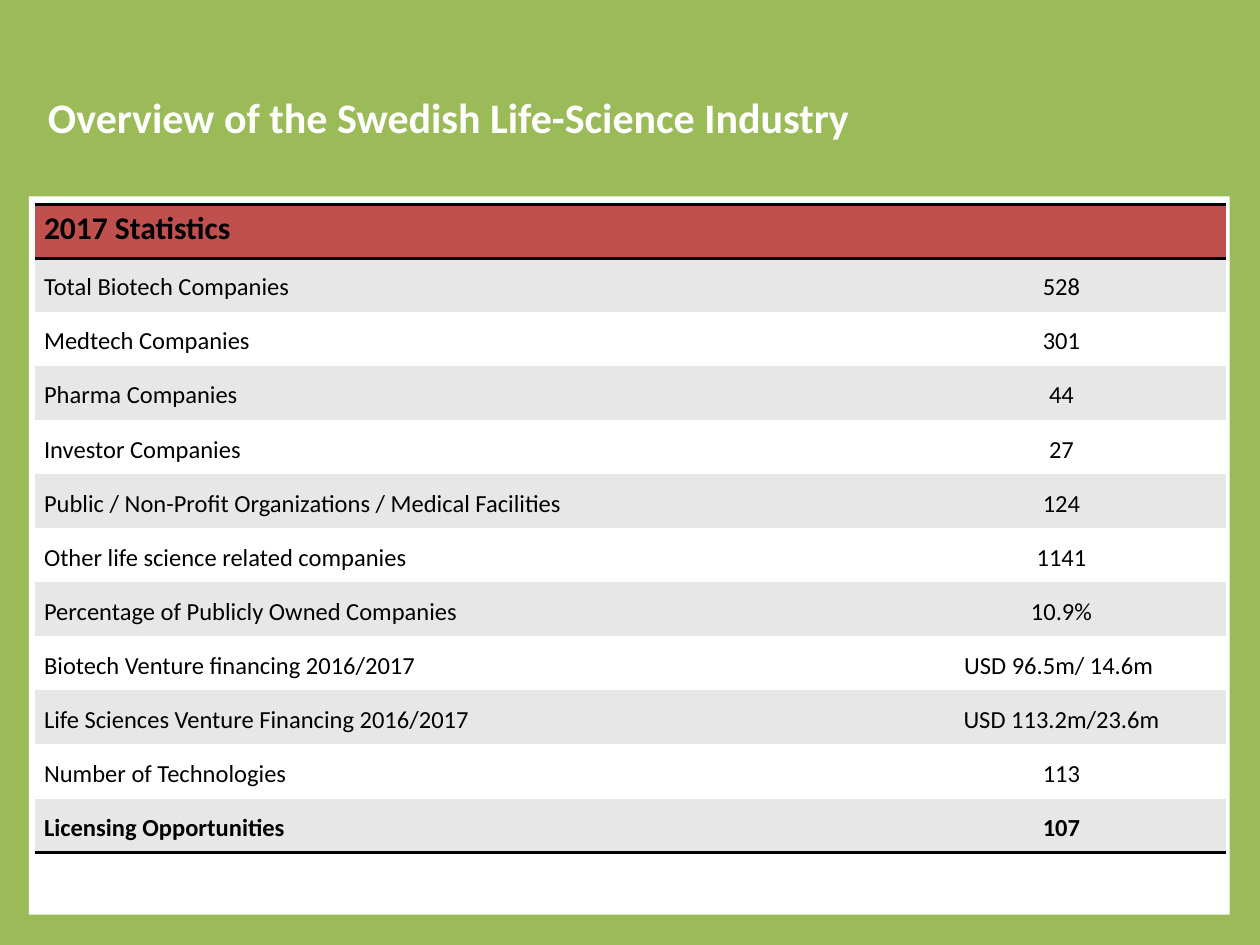
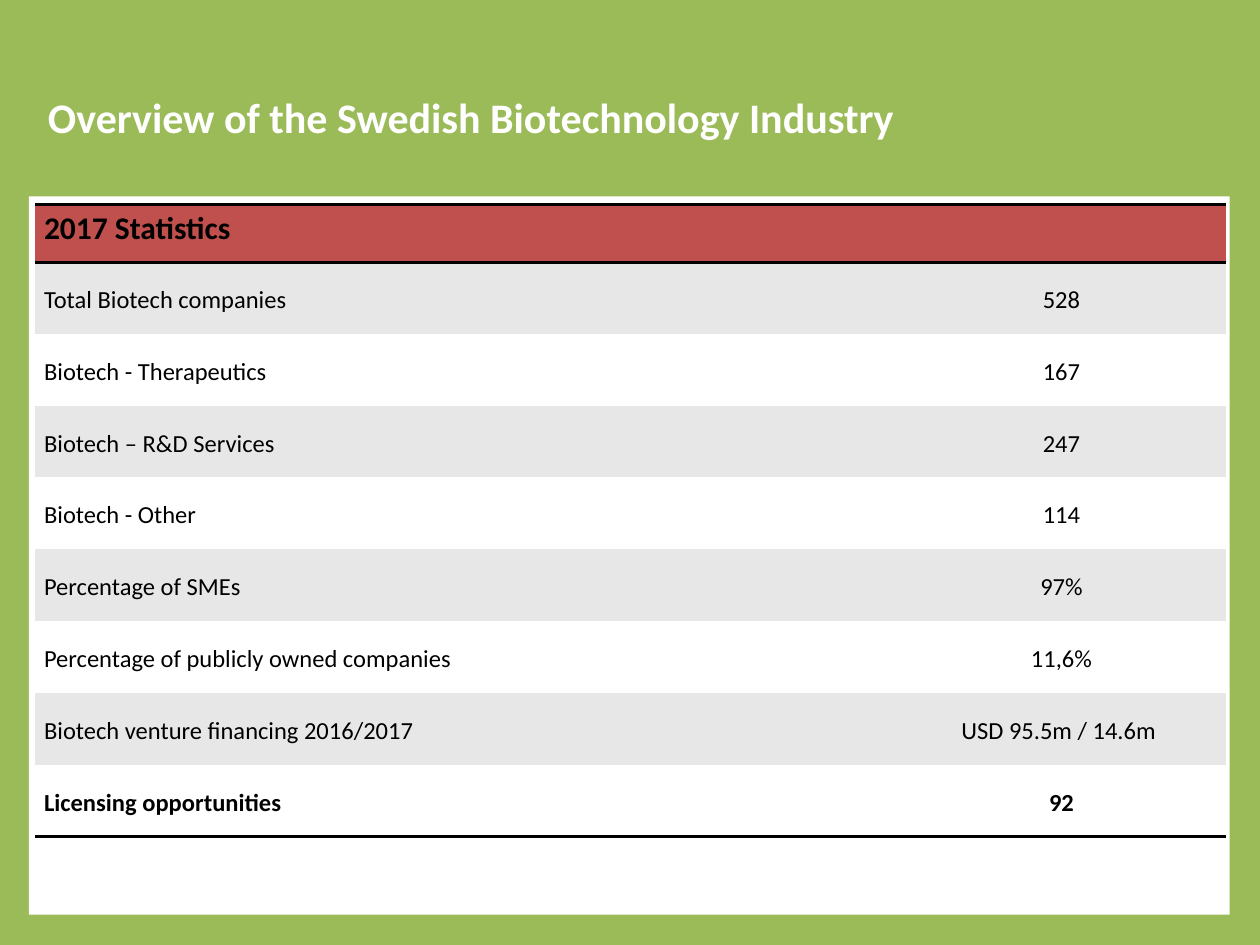
from lxml.etree import SubElement
from pptx import Presentation
from pptx.dml.color import RGBColor
from pptx.enum.shapes import MSO_SHAPE
from pptx.enum.text import MSO_ANCHOR, PP_ALIGN
from pptx.oxml.ns import qn
from pptx.util import Inches, Pt

HEADING = "2017 Statistics"
SLIDES = [
    {
        "title": "Overview of the Swedish Life-Science Industry",
        "head_h": 0.43,
        "table_h": 5.15,
        "stats": [
            ("Total Biotech Companies", "528"),
            ("Medtech Companies", "301"),
            ("Pharma Companies", "44"),
            ("Investor Companies", "27"),
            ("Public / Non-Profit Organizations / Medical Facilities", "124"),
            ("Other life science related companies", "1141"),
            ("Percentage of Publicly Owned Companies", "10.9%"),
            ("Biotech Venture financing 2016/2017", "USD 96.5m/ 14.6m "),
            ("Life Sciences Venture Financing 2016/2017", "USD 113.2m/23.6m"),
            ("Number of Technologies", "113"),
            ("Licensing Opportunities", "107"),
        ],
    },
    {
        "title": "Overview of the Swedish Biotechnology Industry",
        "head_h": 0.46,
        "table_h": 5.02,
        "stats": [
            ("Total Biotech companies", "528"),
            ("Biotech - Therapeutics", "167"),
            ("Biotech – R&D Services", "247"),
            ("Biotech - Other", "114"),
            ("Percentage of SMEs", "97%"),
            ("Percentage of publicly owned companies", "11,6%"),
            ("Biotech venture financing 2016/2017", "USD 95.5m / 14.6m "),
            ("Licensing opportunities", "92"),
        ],
    },
]

GREEN = RGBColor(0x9B, 0xBB, 0x59)
RED = RGBColor(0xC0, 0x50, 0x4D)
GREY = RGBColor(0xE7, 0xE7, 0xE7)
WHITE = RGBColor(0xFF, 0xFF, 0xFF)
BLACK = RGBColor(0, 0, 0)
FONT = "Calibri"
LEFT, TABLE_TOP = 0.28, 1.62
COLS = (6.84, 2.61)
NO_GRID_STYLE = "{2D5ABB26-0587-4C30-8999-92F81FD0307C}"


def set_font(p, size, color, bold):
    """Apply the shared typeface with a size, colour and weight."""
    p.font.name, p.font.size, p.font.bold = FONT, Pt(size), bold
    p.font.color.rgb = color


def add_rule(cell, edge):
    """Draw a black 2 pt border on one edge of a cell."""
    ln = SubElement(cell._tc.get_or_add_tcPr(), qn(f"a:{edge}"), w=str(Pt(2)))
    SubElement(SubElement(ln, qn("a:solidFill")), qn("a:srgbClr"), val=str(BLACK))


def style_cell(cell, text, fill, size, bold, align, edges=()):
    """Fill one table cell with text, colour and borders."""
    for edge in edges:
        add_rule(cell, edge)
    cell.fill.solid()
    cell.fill.fore_color.rgb = fill
    cell.margin_left = cell.margin_right = Inches(0.07)
    cell.margin_top = cell.margin_bottom = 0
    p = cell.text_frame.paragraphs[0]
    p.text, p.alignment, p.line_spacing = text, align, 1.15
    set_font(p, size, BLACK, bold)


def add_panel(s):
    """Add the white content panel."""
    sp = s.shapes.add_shape(MSO_SHAPE.RECTANGLE, Inches(0.23), Inches(1.56),
                            Inches(9.53), Inches(5.7))
    sp.shadow.inherit = False
    sp.fill.solid()
    sp.fill.fore_color.rgb = WHITE
    sp.line.fill.background()


def set_title(s, text):
    """Place and format the slide title."""
    sp = s.shapes.title
    sp.left, sp.top, sp.width, sp.height = map(Inches, (LEFT, 0.3, 9, 1.25))
    tf = sp.text_frame
    tf.vertical_anchor = MSO_ANCHOR.MIDDLE
    p = tf.paragraphs[0]
    p.text, p.alignment = text, PP_ALIGN.LEFT
    set_font(p, 24, WHITE, True)


def add_stats(s, stats, head_h, table_h):
    """Add the banded table, with its last row in bold."""
    frame = s.shapes.add_table(len(stats) + 1, len(COLS), Inches(LEFT), Inches(TABLE_TOP),
                               Inches(sum(COLS)), Inches(table_h))
    table = frame.table
    table._tbl.tblPr.find(qn("a:tableStyleId")).text = NO_GRID_STYLE
    for col, width in zip(table.columns, COLS):
        col.width = Inches(width)
    for row in table.rows:
        row.height = Inches((table_h - head_h) / len(stats))
    table.rows[0].height = Inches(head_h)

    for c, text in enumerate((HEADING, "")):
        style_cell(table.cell(0, c), text, RED, 18, True, PP_ALIGN.LEFT, ("lnT", "lnB"))
    table.cell(0, 0).merge(table.cell(0, 1))

    for r, stat in enumerate(stats, 1):
        last = r == len(stats)
        for c, align in enumerate((PP_ALIGN.LEFT, PP_ALIGN.CENTER)):
            cell = table.cell(r, c)
            style_cell(cell, stat[c], GREY if r % 2 else WHITE, 14, last, align,
                       ("lnB",) if last else ())
            cell.vertical_anchor = MSO_ANCHOR.MIDDLE


def main():
    """Build the presentation."""
    prs = Presentation()
    prs.slide_width, prs.slide_height = Inches(10), Inches(7.5)
    bg = prs.slide_master.background.fill
    bg.solid()
    bg.fore_color.rgb = GREEN
    for item in SLIDES:
        s = prs.slides.add_slide(prs.slide_layouts[5])
        add_panel(s)
        set_title(s, item["title"])
        add_stats(s, item["stats"], item["head_h"], item["table_h"])
    prs.save("out.pptx")


if __name__ == "__main__":
    main()
